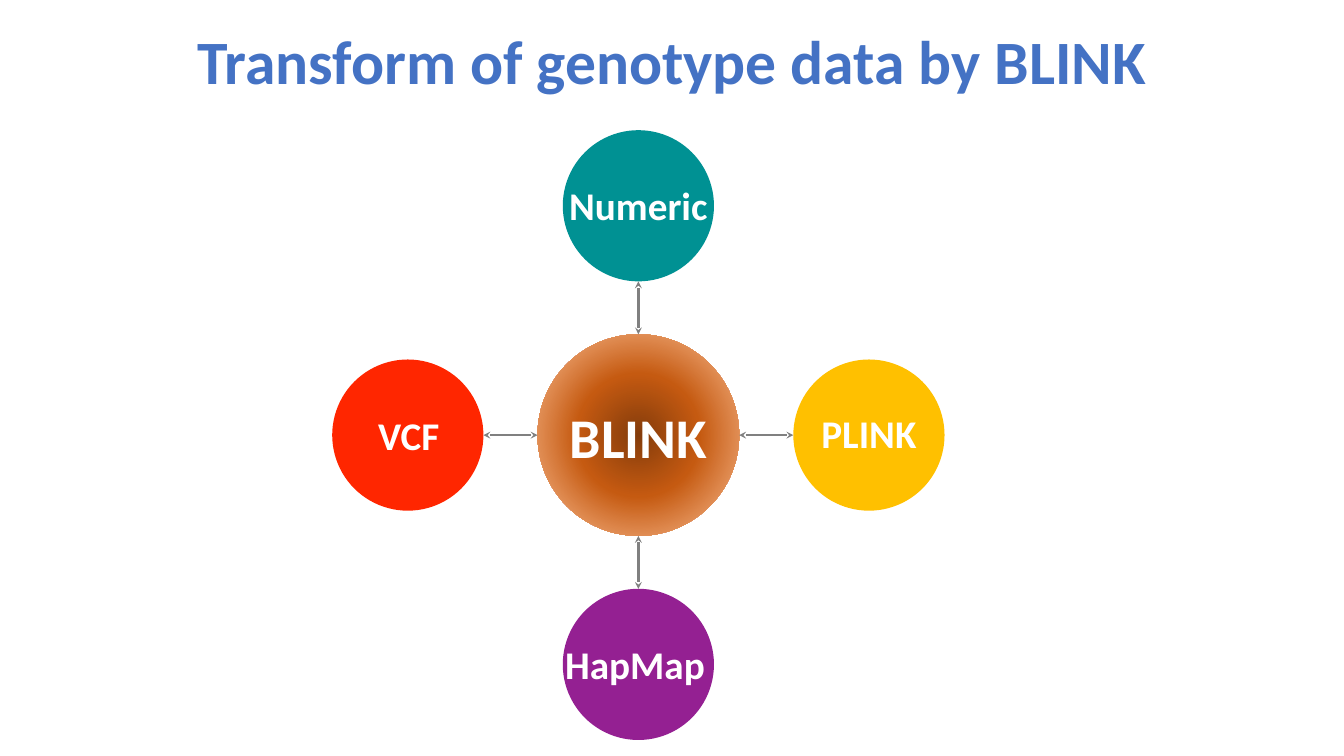
from lxml.etree import SubElement
from pptx import Presentation
from pptx.dml.color import RGBColor
from pptx.enum.shapes import MSO_CONNECTOR, MSO_SHAPE
from pptx.enum.text import MSO_ANCHOR, MSO_AUTO_SIZE, PP_ALIGN
from pptx.oxml import parse_xml
from pptx.oxml.ns import nsdecls, qn
from pptx.util import Inches, Pt

BLUE = RGBColor(0x44, 0x72, 0xC4)
WHITE = RGBColor(0xFF, 0xFF, 0xFF)
GRAY = RGBColor(0x80, 0x80, 0x80)
TEAL = RGBColor(0x00, 0x91, 0x93)
AMBER = RGBColor(0xFF, 0xC0, 0x00)
RED = RGBColor(0xFF, 0x26, 0x00)
PURPLE = RGBColor(0x94, 0x20, 0x92)
DARK_BROWN = RGBColor(0x84, 0x3C, 0x0B)
ORANGE = RGBColor(0xC5, 0x5A, 0x11)
PEACH = RGBColor(0xF4, 0xB1, 0x83)
HUB_STOPS = [(0, DARK_BROWN), (43, ORANGE), (90, PEACH), (97, WHITE)]

COLUMNS, ROWS = 160, 90
HUB_X, HUB_Y = 76, 51.8
HUB_RADIUS, FORMAT_RADIUS = 12, 9
REACH_X, REACH_Y = 27.45, 27.3

# name, fill, direction from the hub, label size, label shift
FORMATS = [
    ("Numeric", TEAL, (0, -1), (18.7, 6.7), (0, 0)),
    ("PLINK", AMBER, (1, 0), (13.5, 6.7), (0, -0.25)),
    ("VCF", RED, (-1, 0), (9.4, 6.7), (0.1, 0)),
    ("HapMap", PURPLE, (0, 1), (18.8, 6.7), (-0.4, 0)),
]


def write(frame, text, *, size, color, font="Calibri", bold=True, spacing=None):
    para = frame.paragraphs[0]
    para.alignment = PP_ALIGN.CENTER
    para.line_spacing = spacing
    span = para.add_run()
    span.text = text
    span.font.name = font
    span.font.size = Pt(size)
    span.font.bold = bold
    span.font.color.rgb = color


class Page:
    """A slide measured in grid columns and rows."""

    def __init__(self, deck):
        self.slide = deck.slides.add_slide(deck.slide_layouts[5])
        self.shapes = self.slide.shapes
        self.column = deck.slide_width / COLUMNS
        self.row = deck.slide_height / ROWS

    def place(self, x, y):
        return round(x * self.column), round(y * self.row)

    def around(self, x, y, width, height):
        """Left, top, width and height of a box centred on x, y."""
        return *self.place(x - width / 2, y - height / 2), *self.place(width, height)

    def title(self, text):
        box = self.shapes.title
        box.left, box.top, box.width, box.height = self.around(80, 7.7, COLUMNS, 15.6)
        frame = box.text_frame
        frame.auto_size = MSO_AUTO_SIZE.NONE
        frame.vertical_anchor = MSO_ANCHOR.MIDDLE
        write(frame, text, size=52.8, color=BLUE, spacing=0.9)

    def circle(self, x, y, radius, color=None):
        disc = self.shapes.add_shape(
            MSO_SHAPE.OVAL, *self.around(x, y, 2 * radius, 2 * radius))
        disc.shadow.inherit = False
        disc.line.fill.background()
        if color is not None:
            disc.fill.solid()
            disc.fill.fore_color.rgb = color
        return disc

    def glowing_circle(self, x, y, radius, stops):
        """Circle with a gradient that runs outward from its centre."""
        marks = "".join(
            f'<a:gs pos="{share * 1000}"><a:srgbClr val="{color}"/></a:gs>'
            for share, color in stops)
        gradient = parse_xml(
            f'<a:gradFill {nsdecls("a")} rotWithShape="1"><a:gsLst>{marks}</a:gsLst>'
            '<a:path path="circle"><a:fillToRect l="50000" t="50000" r="50000" '
            'b="50000"/></a:path></a:gradFill>')
        disc = self.circle(x, y, radius)
        disc.element.spPr.find(qn("a:prstGeom")).addnext(gradient)

    def label(self, text, x, y, width, height, size):
        box = self.shapes.add_textbox(*self.around(x, y, width, height))
        frame = box.text_frame
        frame.word_wrap = False
        frame.auto_size = MSO_AUTO_SIZE.SHAPE_TO_FIT_TEXT
        write(frame, text, size=size, color=WHITE)

    def double_arrow(self, start, end):
        arrow = self.shapes.add_connector(
            MSO_CONNECTOR.STRAIGHT, *self.place(*start), *self.place(*end))
        arrow.line.color.rgb = GRAY
        arrow.line.width = Pt(2)
        properties = arrow.element.spPr
        outline = properties.find(qn("a:ln"))
        for tip in ("a:headEnd", "a:tailEnd"):
            SubElement(outline, qn(tip), type="stealth")
        SubElement(properties, qn("a:effectLst"))


def main():
    deck = Presentation()
    deck.slide_width, deck.slide_height = Inches(16), Inches(9)
    page = Page(deck)
    page.title("Transform of genotype data by BLINK")
    page.glowing_circle(HUB_X, HUB_Y, HUB_RADIUS, HUB_STOPS)
    for name, color, (right, down), label_size, (shift_x, shift_y) in FORMATS:
        x, y = HUB_X + right * REACH_X, HUB_Y + down * REACH_Y
        page.double_arrow(
            (HUB_X + right * HUB_RADIUS, HUB_Y + down * HUB_RADIUS),
            (x - right * FORMAT_RADIUS, y - down * FORMAT_RADIUS))
        page.circle(x, y, FORMAT_RADIUS, color)
        page.label(name, x + shift_x, y + shift_y, *label_size, size=33.6)
    page.label("BLINK", HUB_X, HUB_Y + 0.15, 18.5, 9.1, size=48)
    deck.save("out.pptx")


if __name__ == "__main__":
    main()
